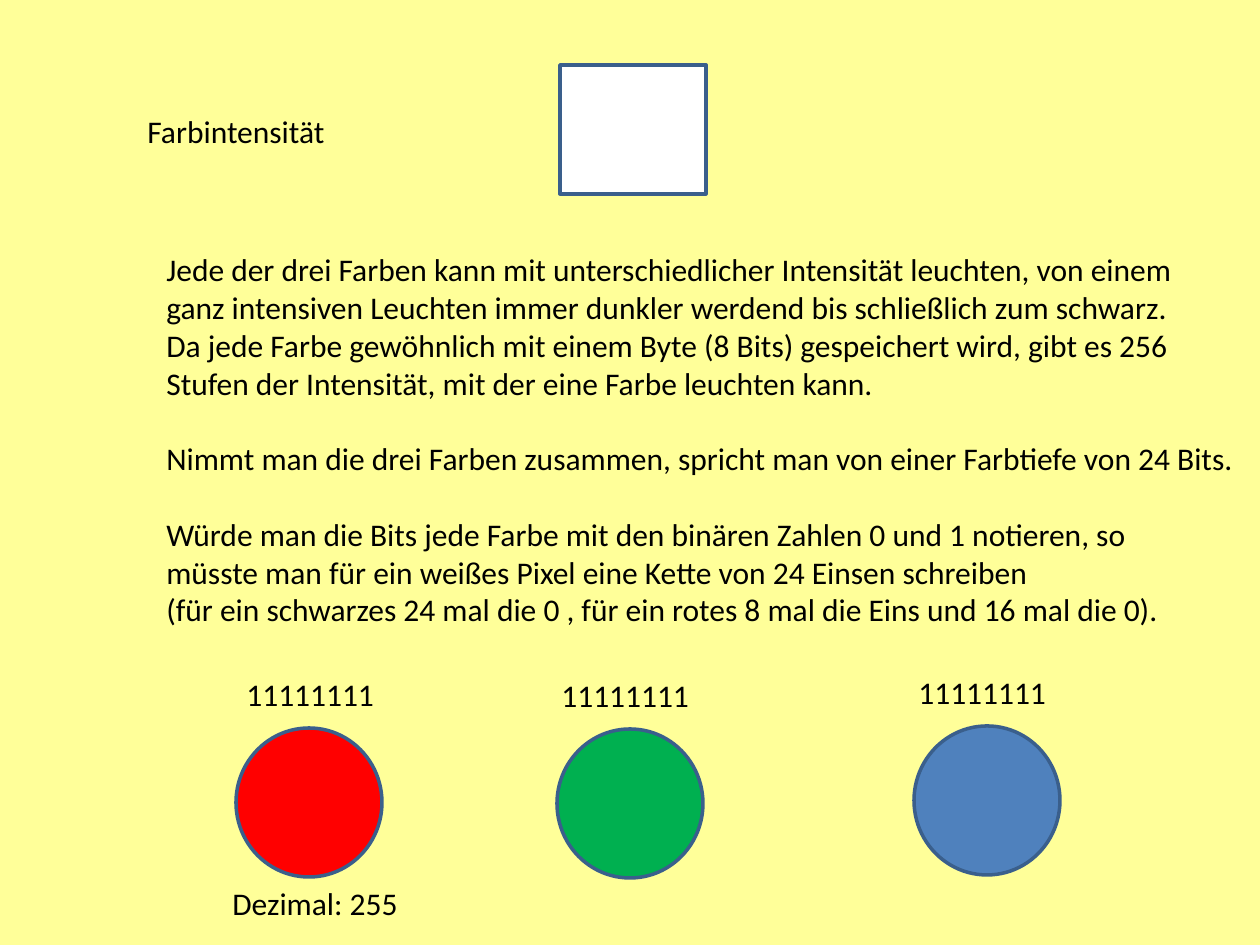
"""Build the slide on colour intensity and colour depth."""
from pptx import Presentation
from pptx.dml.color import RGBColor
from pptx.enum.shapes import MSO_SHAPE
from pptx.util import Pt

COLORS = {
    "background": "FFFF99", "text": "000000", "outline": "3A5F8C",
    "white": "FFFFFF", "red": "FF0000", "green": "00B050", "blue": "4F81BD",
}
FONT = "Calibri"
EXPLANATION = [
    ["Jede der drei Farben kann mit unterschiedlicher Intensität leuchten, von einem",
     "ganz intensiven Leuchten immer dunkler werdend bis schließlich zum schwarz.",
     "Da jede Farbe gewöhnlich mit einem Byte (8 Bits) gespeichert wird, gibt es 256",
     "Stufen der Intensität, mit der eine Farbe leuchten kann."],
    ["Nimmt man die drei Farben zusammen, spricht man von einer Farbtiefe von 24 Bits."],
    ["Würde man die Bits jede Farbe mit den binären Zahlen 0 und 1 notieren, so",
     "müsste man für ein weißes Pixel eine Kette von 24 Einsen schreiben",
     "(für ein schwarzes 24 mal die 0 , für ein rotes 8 mal die Eins und 16 mal die 0)."],
]
TEXTS = [
    ([["Farbintensität"]], (135, 106, 206, 50)),
    (EXPLANATION, (154, 244, 1096, 466)),
    ([["Dezimal: 255"]], (220, 878, 196, 50)),
]
CHANNELS = [
    ("blue", "11111111", 914, 726, 906),
    ("green", "11111111", 557, 729, 549),
    ("red", "11111111", 236, 728, 234),
]
CIRCLE_W, CIRCLE_H = 146, 149
LABEL_W, LABEL_H, LABEL_RISE = 158, 50, 59
PX = 914400 / 126


def rgb(name):
    return RGBColor.from_string(COLORS[name])


def emu(box):
    return [round(v * PX) for v in box]


def add_text(slide, paragraphs, box):
    tf = slide.shapes.add_textbox(*emu(box)).text_frame
    tf.word_wrap = False
    for i, lines in enumerate(paragraphs):
        p = tf.add_paragraph() if i else tf.paragraphs[0]
        p.text = "\v".join(lines)
        p.space_before = Pt(21.6 if i else 0)
        for r in p.runs:
            r.font.name = FONT
            r.font.size = Pt(18)
            r.font.color.rgb = rgb("text")


def add_figure(slide, kind, color, box):
    sp = slide.shapes.add_shape(kind, *emu(box))
    sp.shadow.inherit = False
    sp.fill.solid()
    sp.fill.fore_color.rgb = rgb(color)
    sp.line.color.rgb = rgb("outline")
    sp.line.width = Pt(2)


def main():
    prs = Presentation()
    prs.slide_width, prs.slide_height = emu((1260, 945))
    s = prs.slides.add_slide(prs.slide_layouts[6])
    s.background.fill.solid()
    s.background.fill.fore_color.rgb = rgb("background")
    for paragraphs, box in TEXTS:
        add_text(s, paragraphs, box)
    add_figure(s, MSO_SHAPE.RECTANGLE, "white", (560, 65, 146, 129))
    for color, bits, x, y, label_x in CHANNELS:
        add_figure(s, MSO_SHAPE.OVAL, color, (x, y, CIRCLE_W, CIRCLE_H))
        add_text(s, [[bits]], (label_x, y - LABEL_RISE, LABEL_W, LABEL_H))
    prs.save("out.pptx")


if __name__ == "__main__":
    main()
